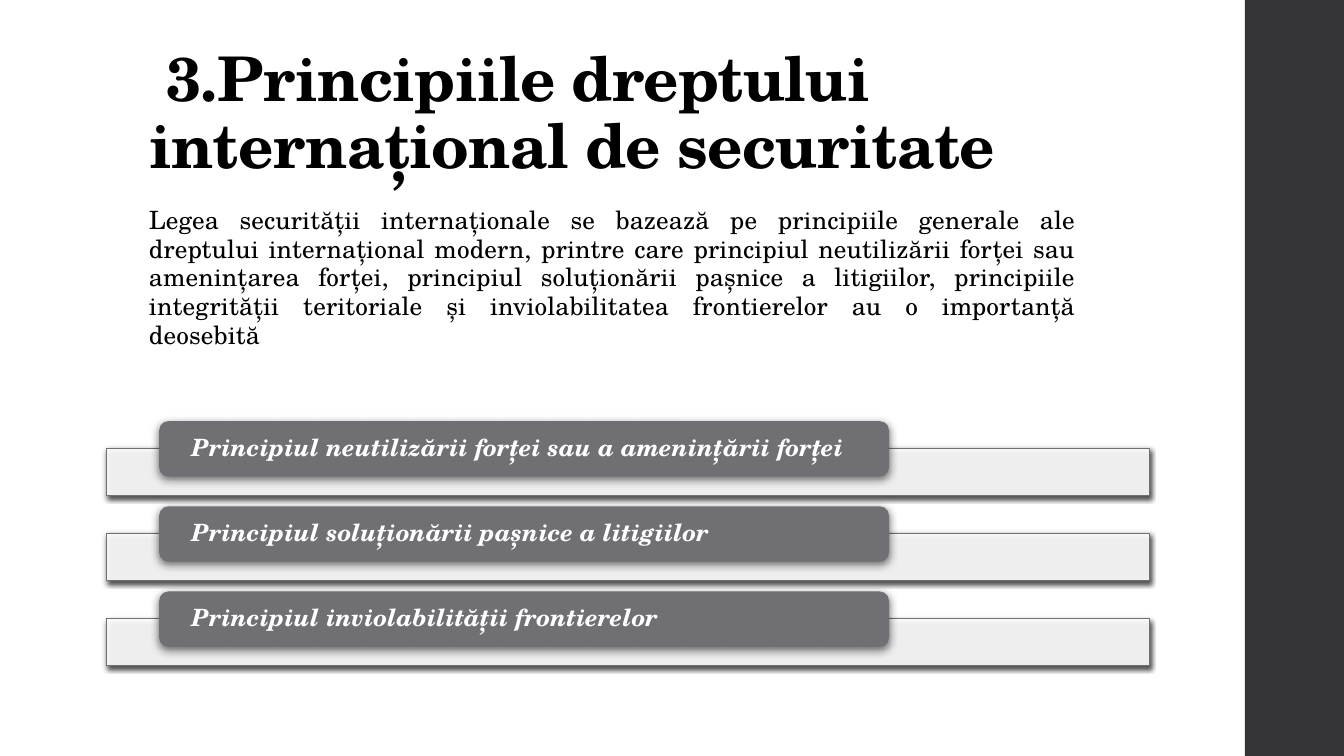
from lxml import etree
from pptx import Presentation
from pptx.dml.color import RGBColor
from pptx.enum.shapes import MSO_SHAPE
from pptx.enum.text import MSO_ANCHOR, MSO_AUTO_SIZE, PP_ALIGN
from pptx.oxml.ns import qn
from pptx.util import Pt

RECTANGLE = MSO_SHAPE.RECTANGLE
ROUNDED = MSO_SHAPE.ROUNDED_RECTANGLE
TOP, MIDDLE, BOTTOM = MSO_ANCHOR.TOP, MSO_ANCHOR.MIDDLE, MSO_ANCHOR.BOTTOM
LEFT, JUSTIFY = PP_ALIGN.LEFT, PP_ALIGN.JUSTIFY
NO_AUTOFIT = MSO_AUTO_SIZE.NONE

FONT = "TeX Gyre Schola"
BLACK, WHITE, GREY, DARK = "000000", "FFFFFF", "6F6F74", "353537"
ROW_PITCH = 60.84

TITLE = " 3.Principiile dreptului internațional de securitate"
INTRO = (
    "Legea securității internaționale se bazează pe principiile generale ale "
    "dreptului internațional modern, printre care principiul neutilizării forței "
    "sau amenințarea forței, principiul soluționării pașnice a litigiilor, "
    "principiile integrității teritoriale și inviolabilitatea frontierelor au o "
    "importanță deosebită"
)
PRINCIPLES = [
    "Principiul neutilizării forței sau a amenințării forței",
    "Principiul soluționării pașnice a litigiilor",
    "Principiul inviolabilității frontierelor",
]


def rgb(color):
    return RGBColor.from_string(color)


def set_all(target, values):
    for name, value in values.items():
        setattr(target, name, value)


def place(shape, left, top, width, height):
    set_all(shape, {"left": Pt(left), "top": Pt(top),
                    "width": Pt(width), "height": Pt(height)})


def write(shape, text, color, font, paragraph, frame, tracking=0):
    text_frame = shape.text_frame
    set_all(text_frame, {"word_wrap": True, "auto_size": NO_AUTOFIT, **frame})
    line = text_frame.paragraphs[0]
    set_all(line, paragraph)
    run = line.add_run()
    run.text = text
    set_all(run.font, {"name": FONT, **font})
    run.font.color.rgb = rgb(color)
    if tracking:
        run.font._element.set("spc", str(tracking))


def add_block(slide, preset, box, fill, outline=None):
    block = slide.shapes.add_shape(preset, *map(Pt, box))
    block.shadow.inherit = False
    block.fill.solid()
    block.fill.fore_color.rgb = rgb(fill)
    if outline:
        block.line.color.rgb = rgb(outline)
        block.line.width = Pt(0.75)
    else:
        block.line.fill.background()
    return block


def set_alpha(color_element, percent):
    etree.SubElement(color_element, qn("a:alpha"), val=str(percent * 1000))


def add_shadow(block, opacity, blur, distance):
    effects = block._element.spPr.find(qn("a:effectLst"))
    shadow = etree.SubElement(
        effects, qn("a:outerShdw"), blurRad=str(Pt(blur)), dist=str(Pt(distance)),
        dir="5400000", algn="ctr", rotWithShape="0")
    set_alpha(etree.SubElement(shadow, qn("a:srgbClr"), val=BLACK), opacity)


def add_title(slide):
    title = slide.shapes.title
    place(title, 99.36, 28.8, 763.2, 104.4)
    write(title, TITLE, BLACK, {"size": Pt(44), "bold": True},
          {"alignment": LEFT, "line_spacing": 0.9},
          {"vertical_anchor": BOTTOM}, tracking=-50)


def add_intro(slide):
    intro = slide.shapes.add_textbox(Pt(99.36), Pt(144), Pt(676.8), Pt(342.72))
    write(intro, INTRO, BLACK, {"size": Pt(18)},
          {"alignment": JUSTIFY, "line_spacing": 0.95,
           "space_before": Pt(14), "space_after": Pt(2)},
          {"vertical_anchor": TOP}, tracking=10)


def add_principle(slide, index, text):
    offset = index * ROW_PITCH
    bar = add_block(slide, RECTANGLE, (76.32, 320.2 + offset, 744.48, 33.84),
                    WHITE, GREY)
    set_alpha(bar._element.spPr.find(qn("a:solidFill"))[0], 90)
    add_shadow(bar, 75, 4, 1.2)
    label = add_block(slide, ROUNDED, (113.76, 300.8 + offset, 521.28, 39.6), GREY)
    add_shadow(label, 55, 6, 2)
    write(label, text, WHITE, {"size": Pt(17), "bold": True, "italic": True},
          {"alignment": LEFT, "line_spacing": 0.9},
          {"vertical_anchor": MIDDLE, "margin_left": Pt(21), "margin_right": Pt(21),
           "margin_top": 0, "margin_bottom": 0})


def main():
    deck = Presentation()
    set_all(deck, {"slide_width": Pt(960), "slide_height": Pt(540)})
    slide = deck.slides.add_slide(deck.slide_layouts[5])
    slide.background.fill.solid()
    slide.background.fill.fore_color.rgb = rgb(WHITE)
    add_block(slide, RECTANGLE, (889.2, 0, 70.8, 540), DARK)
    add_title(slide)
    add_intro(slide)
    for index, text in enumerate(PRINCIPLES):
        add_principle(slide, index, text)
    deck.save("out.pptx")


if __name__ == "__main__":
    main()
